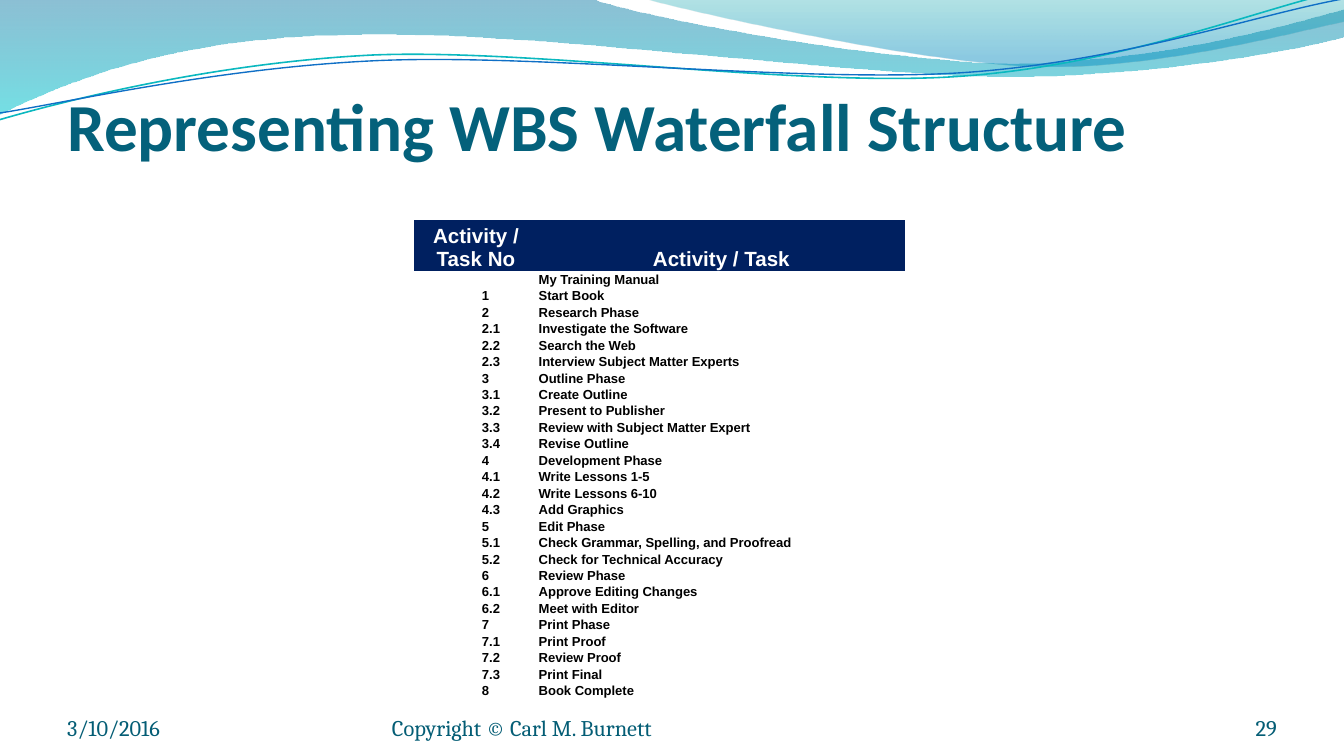
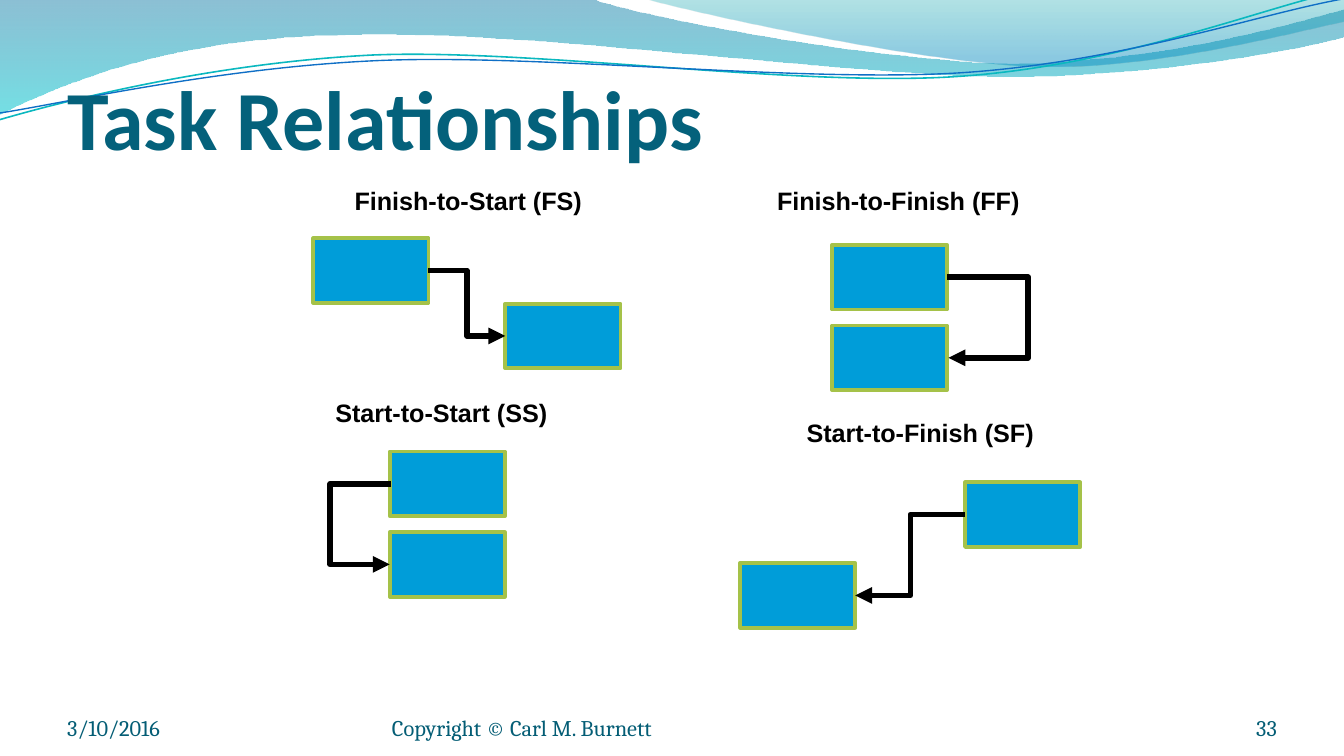
"""Build the work breakdown table and task relationship slides."""

import dataclasses
import math
import typing

import lxml.etree
import pptx
import pptx.dml.color
import pptx.enum.shapes
import pptx.enum.text
import pptx.oxml.ns
import pptx.util

Pt = pptx.util.Pt
qn = pptx.oxml.ns.qn
Align = pptx.enum.text.PP_ALIGN
Anchor = pptx.enum.text.MSO_ANCHOR
AutoSize = pptx.enum.text.MSO_AUTO_SIZE
Point = tuple[float, float]

COLOURS = {
    "title": "04617B", "footer": "045D75", "header": "002060",
    "white": "FFFFFF", "black": "000000", "box": "009DD9", "box_edge": "A5C249",
    "band_blue": "0074A1", "band_cyan": "00C6CF",
    "band_teal": "00A1A9", "band_sky": "008BBF",
    "wave_teal": "0AB8BF", "wave_blue": "0F6FC6",
}
NO_TABLE_STYLE = "{2D5ABB26-0587-4C30-8999-92F81FD0307C}"
WAVE_TILT = 2.7
FIRST_MASTER_ID = 100
BOX_WIDTH, BOX_HEIGHT = 61.7, 34.6
CONNECTOR_NUDGE = 0.75

FLUSH = {"margin_left": 0, "margin_top": 0, "margin_right": 0, "margin_bottom": 0}
TITLE_FRAME = FLUSH | {"margin_top": Pt(3.6), "vertical_anchor": Anchor.TOP,
                       "word_wrap": True, "auto_size": AutoSize.NONE}
FOOTER_FRAME = FLUSH | {"vertical_anchor": Anchor.BOTTOM, "word_wrap": True}
LABEL_FRAME = {"word_wrap": False, "auto_size": AutoSize.SHAPE_TO_FIT_TEXT}
CELL_FORMAT = {"margin_left": Pt(0.4), "margin_top": Pt(0.4), "margin_right": Pt(0.4),
               "margin_bottom": 0, "vertical_anchor": Anchor.BOTTOM}


@dataclasses.dataclass(frozen=True)
class TextStyle:
    """Font of a run of text."""
    size: float
    name: str
    colour: str
    bold: bool = False


@dataclasses.dataclass(frozen=True)
class Stop:
    """Gradient stop with an opacity in percent."""
    position: float
    colour: str
    opacity: int


@dataclasses.dataclass(frozen=True)
class Band:
    """Filled outline: two numbers make a line, six make a curve."""
    start: Point
    segments: tuple[tuple[float, ...], ...]
    stops: tuple[Stop, Stop]


@dataclasses.dataclass(frozen=True)
class Wave:
    """Curved line tilted about a centre."""
    start: Point
    segments: tuple[tuple[float, ...], ...]
    centre: Point
    colour: str
    weight: float


@dataclasses.dataclass(frozen=True)
class Footer:
    """Text at the foot of a slide."""
    text: str
    left: float
    width: float
    alignment: Align = Align.LEFT


@dataclasses.dataclass(frozen=True)
class Relationship:
    """Two task boxes joined by an arrow from one side to another."""
    label: str
    label_at: Point
    label_width: float
    first: Point
    second: Point
    leaves_right: bool
    enters_right: bool
    elbow: float


FOOTER_STYLE = TextStyle(12, "Cambria", "footer")
LABEL_STYLE = TextStyle(13.5, "Arial", "black", True)
HEADER_STYLE = TextStyle(11, "Arial", "white", True)
TASK_STYLE = TextStyle(7, "Arial", "black", True)

BANDS = (
    Band((0, 0), (
        (316.8, -0.7),
        (342.7, 9.4, 478.1, 33.8, 545.8, 33.8),
        (614.2, 33.8, 689.8, 13.7, 720, 5),
        (720.7, 19.4),
        (707.8, 23.8, 626.4, 41, 537.1, 41),
        (447.8, 40.3, 275, 15.1, 185, 18.7),
        (92.9, 19.4, 33.1, 44.6, -0.7, 61.2),
        (0, 0),
    ), (Stop(0, "band_blue", 45), Stop(1, "band_cyan", 55))),
    Band((344.9, -0.7), (
        (366.5, 5.8, 491, 33.1, 553.7, 35.3),
        (616.3, 37.4, 691.9, 17.3, 720, 11.5),
        (720, 0),
        (344.9, -0.7),
    ), (Stop(0, "band_teal", 30), Stop(0.8, "band_sky", 45))),
)
WAVES = (
    Wave((0, 64.1), (
        (34.6, 54, 113.8, 33.8, 199.4, 29.5),
        (285.1, 25.9, 426.2, 46.8, 512.6, 41),
        (599.8, 35.3, 676.1, 4.3, 718.6, -5),
    ), (359.3, 31.3), "wave_teal", 0.85),
    Wave((0, 60.5), (
        (33.8, 55.4, 118.1, 36, 203.8, 32.4),
        (290.2, 28.8, 429.8, 44.6, 516.2, 38.9),
        (601.9, 33.1, 675.4, 7.2, 720, -0.7),
    ), (359.6, 32), "wave_blue", 0.75),
)

TASKS = (
    ("", "My Training Manual"), ("1", "Start Book"),
    ("2", "Research Phase"), ("2.1", "Investigate the Software"),
    ("2.2", "Search the Web"), ("2.3", "Interview Subject Matter Experts"),
    ("3", "Outline Phase"), ("3.1", "Create Outline"),
    ("3.2", "Present to Publisher"), ("3.3", "Review with Subject Matter Expert"),
    ("3.4", "Revise Outline"), ("4", "Development Phase"),
    ("4.1", "Write Lessons 1-5"), ("4.2", "Write Lessons 6-10"),
    ("4.3", "Add Graphics"), ("5", "Edit Phase"),
    ("5.1", "Check Grammar, Spelling, and Proofread"),
    ("5.2", "Check for Technical Accuracy"), ("6", "Review Phase"),
    ("6.1", "Approve Editing Changes"), ("6.2", "Meet with Editor"),
    ("7", "Print Phase"), ("7.1", "Print Proof"), ("7.2", "Review Proof"),
    ("7.3", "Print Final"), ("8", "Book Complete"),
)

RELATIONSHIPS = (
    Relationship("Finish-to-Start (FS)", (182.9, 95.8), 137.5,
                 (167.8, 127.6), (270.7, 162.7), True, False, 250.2),
    Relationship("Start-to-Start (SS)", (172.6, 209.5), 129.6,
                 (208.8, 241.9), (208.8, 285.1), False, False, 176.4),
    Relationship("Finish-to-Finish (FF)", (409.2, 95.8), 146.9,
                 (445.7, 131.2), (445.7, 174.4), True, True, 551.6),
    Relationship("Start-to-Finish (SF)", (425, 220.3), 137.5,
                 (517, 258.4), (396.5, 301.7), False, True, 487.7),
)


def rgb(name: str) -> pptx.dml.color.RGBColor:
    """Return a palette colour."""
    return pptx.dml.color.RGBColor.from_string(COLOURS[name])


def apply_format(target: typing.Any, values: dict[str, typing.Any]) -> None:
    """Set each attribute named in a dict."""
    for name, value in values.items():
        setattr(target, name, value)


def write_text(frame: typing.Any, text: str, style: TextStyle,
               alignment: Align = Align.LEFT) -> typing.Any:
    """Write one styled paragraph."""
    paragraph = frame.paragraphs[0]
    paragraph.alignment = alignment
    run = paragraph.add_run()
    run.text = text
    apply_format(run.font, {"size": Pt(style.size), "name": style.name, "bold": style.bold})
    run.font.color.rgb = rgb(style.colour)
    return paragraph


def set_line(shape: typing.Any, colour: str, weight: float) -> None:
    """Set the colour and width of an outline."""
    shape.line.color.rgb = rgb(colour)
    shape.line.width = Pt(weight)


def tilt(point: Point, centre: Point) -> Point:
    """Turn a point clockwise about a centre by the wave tilt."""
    angle = math.radians(WAVE_TILT)
    across, down = point[0] - centre[0], point[1] - centre[1]
    return (centre[0] + across * math.cos(angle) - down * math.sin(angle),
            centre[1] + across * math.sin(angle) + down * math.cos(angle))


def draw_curves(shapes: typing.Any, outline: Band | Wave, closed: bool) -> typing.Any:
    """Draw an outline of straight lines and Bézier curves."""
    points = [outline.start]
    for segment in outline.segments:
        points.extend(zip(segment[::2], segment[1::2]))
    if isinstance(outline, Wave):
        points = [tilt(point, outline.centre) for point in points]
    start, *rest = [(Pt(x), Pt(y)) for x, y in points]
    builder = shapes.build_freeform(*start)
    builder.add_line_segments(rest, close=closed)
    shape = builder.convert_to_shape()
    shape.shadow.inherit = False
    steps = iter(list(shape.element.iter(qn("a:lnTo"))))
    for segment in outline.segments:
        first = next(steps)
        if len(segment) == 6:
            first.tag = qn("a:cubicBezTo")
            for step in (next(steps), next(steps)):
                first.append(step[0])
                step.getparent().remove(step)
    return shape


def draw_band(shapes: typing.Any, band: Band) -> None:
    """Draw a band with a see-through gradient."""
    shape = draw_curves(shapes, band, True)
    shape.line.fill.background()
    shape.fill.gradient()
    shape.fill.gradient_angle = 270
    for gradient_stop, stop in zip(shape.fill.gradient_stops, band.stops):
        gradient_stop.color.rgb = rgb(stop.colour)
        gradient_stop.position = stop.position
    for colour, stop in zip(shape.element.iter(qn("a:srgbClr")), band.stops):
        lxml.etree.SubElement(colour, qn("a:alpha"), val=str(stop.opacity * 1000))


def draw_wave(shapes: typing.Any, wave: Wave) -> None:
    """Draw a tilted curved line."""
    shape = draw_curves(shapes, wave, False)
    shape.fill.background()
    set_line(shape, wave.colour, wave.weight)
    shape.rotation = 360 - WAVE_TILT


def decorate_master(presentation: typing.Any, slide: typing.Any) -> None:
    """Draw the bands and waves and move them behind the master's text."""
    title = slide.shapes.title.element
    for band in BANDS:
        draw_band(slide.shapes, band)
    group = slide.shapes.add_group_shape()
    for wave in WAVES:
        draw_wave(group.shapes, wave)
    tree = presentation.slide_master.shapes.element
    drawn = [shape.element for shape in slide.shapes if shape.element is not title]
    identity = FIRST_MASTER_ID
    for index, element in enumerate(drawn, start=2):
        tree.insert(index, element)
        for properties in element.iter(qn("p:cNvPr")):
            properties.set("id", str(identity))
            identity += 1


def write_frame(slide: typing.Any, title: str, size: float,
                top: float, height: float, number: str) -> None:
    """Write the title and footers of a slide."""
    shape = slide.shapes.title
    apply_format(shape, {"left": Pt(36), "top": Pt(top), "width": Pt(648), "height": Pt(height)})
    apply_format(shape.text_frame, TITLE_FRAME)
    write_text(shape.text_frame, title, TextStyle(size, "Calibri", "title", True))
    for footer in (Footer("3/10/2016", 36, 168),
                   Footer("Copyright © Carl M. Burnett", 210, 264),
                   Footer(number, 624, 60, Align.RIGHT)):
        box = slide.shapes.add_textbox(Pt(footer.left), Pt(375.4), Pt(footer.width), Pt(21.6))
        apply_format(box.text_frame, FOOTER_FRAME)
        write_text(box.text_frame, footer.text, FOOTER_STYLE, footer.alignment)


def fill_task_cell(cell: typing.Any, text: str, is_number: bool) -> None:
    """Write a task name or an indented task number."""
    cell.fill.background()
    if not text:
        ending = lxml.etree.SubElement(cell.text_frame.paragraphs[0]._p, qn("a:endParaRPr"),
                                       sz=str(TASK_STYLE.size * 100), b="1")
        lxml.etree.SubElement(ending, qn("a:latin"), typeface=TASK_STYLE.name)
        return
    paragraph = write_text(cell.text_frame, text, TASK_STYLE)
    if is_number:
        paragraph.level = 1
        properties = paragraph._p.get_or_add_pPr()
        properties.set("marL", str(Pt(36)))
        properties.set("indent", "0")


def draw_task_table(slide: typing.Any) -> None:
    """Draw the numbered list of tasks as a table."""
    rows = (("Activity / Task No", "Activity / Task"),) + TASKS
    frame = slide.shapes.add_table(len(rows), 2, Pt(221.8), Pt(118.1), Pt(263), Pt(248.5))
    table = frame.table
    next(frame.element.iter(qn("a:tableStyleId"))).text = NO_TABLE_STYLE
    apply_format(table, {"first_row": False, "horz_banding": False})
    for column, width in zip(table.columns, (66.4, 196.6)):
        column.width = Pt(width)
    for row_index, row in enumerate(rows):
        table.rows[row_index].height = Pt(8.57 if row_index else 25.7)
        for column_index, text in enumerate(row):
            cell = table.cell(row_index, column_index)
            apply_format(cell, CELL_FORMAT)
            if row_index:
                fill_task_cell(cell, text, column_index == 0)
            else:
                cell.fill.solid()
                cell.fill.fore_color.rgb = rgb("header")
                write_text(cell.text_frame, text, HEADER_STYLE, Align.CENTER)


def draw_arrow(shapes: typing.Any, start: Point, finish: Point, elbow: float) -> None:
    """Draw a bent arrow whose middle leg stands at the elbow."""
    connector = shapes.add_connector(pptx.enum.shapes.MSO_CONNECTOR.ELBOW,
                                     *(Pt(value) for value in start + finish))
    set_line(connector, "black", 3)
    properties = connector.element.spPr
    lxml.etree.SubElement(properties.find(qn("a:ln")), qn("a:tailEnd"), type="triangle")
    lxml.etree.SubElement(properties, qn("a:effectLst"))
    ratio = round((elbow - start[0]) / (finish[0] - start[0]) * 100000)
    lxml.etree.SubElement(next(properties.iter(qn("a:avLst"))), qn("a:gd"),
                          name="adj1", fmla=f"val {ratio}")


def draw_relationship(slide: typing.Any, relationship: Relationship) -> None:
    """Draw a labelled pair of boxes and their arrow."""
    shapes = slide.shapes.add_group_shape().shapes
    ends = []
    for (left, top), right_side in ((relationship.first, relationship.leaves_right),
                                    (relationship.second, relationship.enters_right)):
        box = shapes.add_shape(pptx.enum.shapes.MSO_SHAPE.RECTANGLE,
                               Pt(left), Pt(top), Pt(BOX_WIDTH), Pt(BOX_HEIGHT))
        box.shadow.inherit = False
        box.fill.solid()
        box.fill.fore_color.rgb = rgb("box")
        set_line(box, "box_edge", 2)
        ends.append((left + BOX_WIDTH * right_side, top + BOX_HEIGHT / 2))
    if ends[0][0] == ends[1][0]:
        nudged = int(relationship.enters_right)
        ends[nudged] = (ends[nudged][0] + CONNECTOR_NUDGE, ends[nudged][1])
    draw_arrow(shapes, *ends, relationship.elbow)
    left, top = relationship.label_at
    label = shapes.add_textbox(Pt(left), Pt(top), Pt(relationship.label_width), Pt(23.8))
    apply_format(label.text_frame, LABEL_FRAME)
    write_text(label.text_frame, relationship.label, LABEL_STYLE)


def main() -> None:
    """Build and save both slides."""
    presentation = pptx.Presentation()
    apply_format(presentation, {"slide_width": Pt(720), "slide_height": Pt(405)})
    layout = presentation.slide_layouts[5]
    table_slide, relationship_slide = (presentation.slides.add_slide(layout) for _ in range(2))
    decorate_master(presentation, table_slide)
    write_frame(table_slide, "Representing WBS Waterfall Structure", 36, 41.8, 67.7, "29")
    draw_task_table(table_slide)
    write_frame(relationship_slide, "Task Relationships", 45, 32, 57.6, "33")
    for relationship in RELATIONSHIPS:
        draw_relationship(relationship_slide, relationship)
    presentation.save("out.pptx")


if __name__ == "__main__":
    main()
